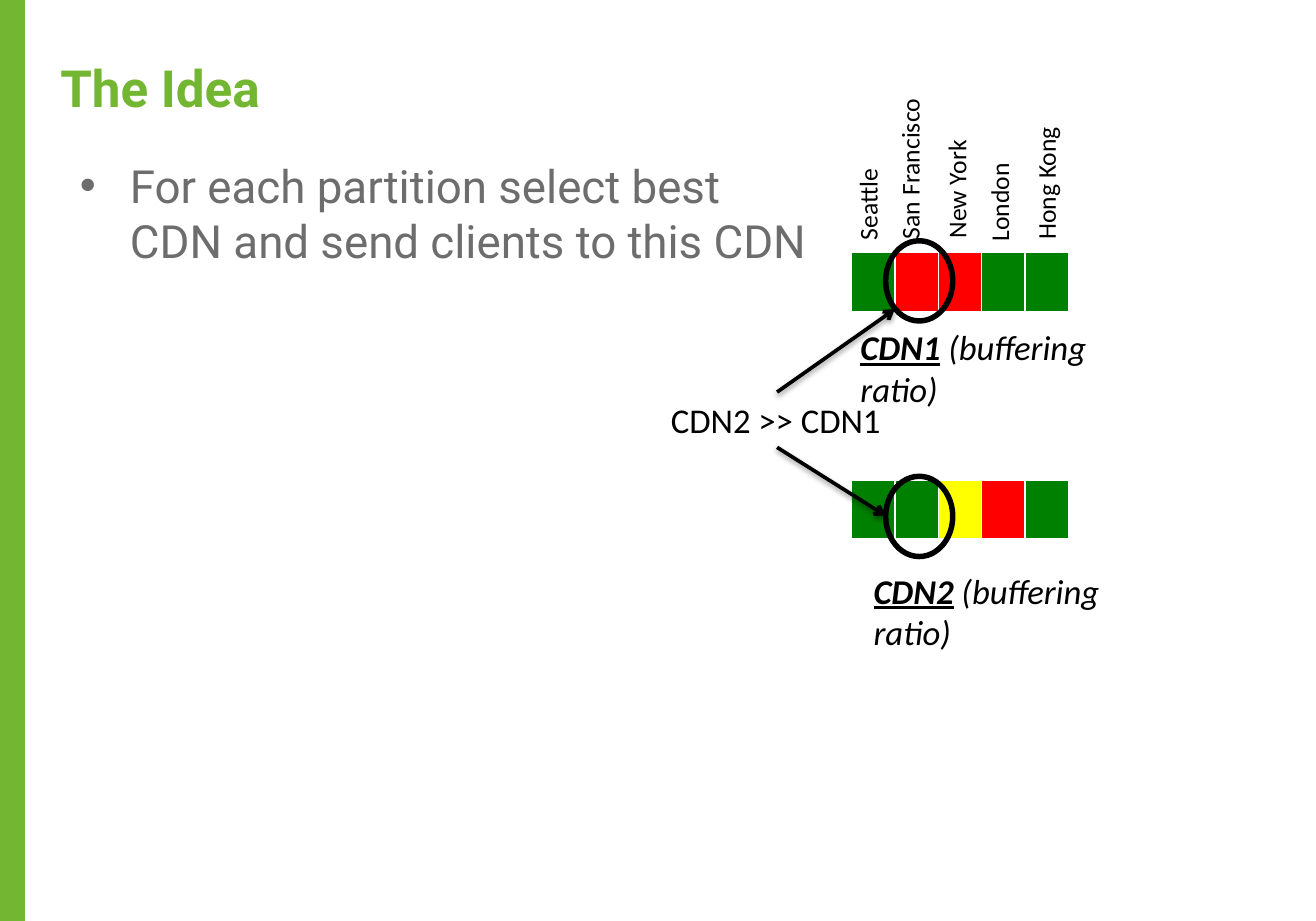
from dataclasses import dataclass

from lxml import etree
from pptx import Presentation
from pptx import util as u
from pptx.dml.color import RGBColor
from pptx.enum import shapes, text
from pptx.oxml import parse_xml
from pptx.oxml.ns import nsdecls, qn

EMU_PER_PX = 9144
BLACK = RGBColor(0x00, 0x00, 0x00)
WHITE = RGBColor(0xFF, 0xFF, 0xFF)
LIME = RGBColor(0x73, 0xB6, 0x32)
GREY = RGBColor(0x6D, 0x6D, 0x6D)
GREEN = RGBColor(0x00, 0x80, 0x00)
YELLOW = RGBColor(0xFF, 0xFF, 0x00)
RED = RGBColor(0xFF, 0x00, 0x00)
CELL_W, CELL_H = 33, 46


@dataclass(frozen=True)
class CdnRow:
    """A strip of city cells with its ring, caption and arrow end."""

    name: str
    top: int
    colours: tuple[RGBColor, ...]
    caption: tuple[int, int]
    ring_top: int
    arrow_side: int
    arrow_end: tuple[int, int]


@dataclass(frozen=True)
class City:
    """A column label read from bottom to top."""

    name: str
    left: int
    top: int
    width: int


ROWS = (
    CdnRow("CDN1", 192, (GREEN, RED, RED, GREEN, GREEN), (644, 243), 183, 0, (680, 235)),
    CdnRow("CDN2", 365, (GREEN, GREEN, YELLOW, RED, GREEN), (654, 428), 362, 2, (673, 392)),
)
CITIES = (
    City("Seattle", 619, 135, 81),
    City("San Francisco", 624, 107, 135),
    City("New York", 669, 116, 116),
    City("London", 719, 136, 81),
    City("Hong Kong", 731, 111, 128),
)


def px(n: int) -> u.Emu:
    """Turn px into EMU."""
    return u.Emu(n * EMU_PER_PX)


def add_run(p, content: str, *, size: int, font: str = "Calibri", colour: RGBColor = BLACK,
            bold: bool = False, italic: bool = False, underline: bool = False) -> None:
    """Append a formatted run to a paragraph."""
    r = p.add_run()
    r.text = content
    f = r.font
    f.size, f.name, f.color.rgb = u.Pt(size), font, colour
    f.bold, f.italic, f.underline = bold, italic, underline


def add_box(s, left: int, top: int, width: int, height: int, *, wrap: bool = True):
    """Add an empty text box."""
    sp = s.shapes.add_textbox(px(left), px(top), px(width), px(height))
    sp.text_frame.word_wrap = wrap
    return sp


def add_bullet(p, indent: int) -> None:
    """Give a paragraph a hanging bullet."""
    pPr = p._p.get_or_add_pPr()
    pPr.set("marL", str(px(indent)))
    pPr.set("indent", str(px(-indent)))
    etree.SubElement(pPr, qn("a:buFont")).set("typeface", "Arial")
    etree.SubElement(pPr, qn("a:buChar")).set("char", "•")


def add_strip(s, row: CdnRow) -> None:
    """Add the one-row table of coloured cells."""
    n = len(row.colours)
    table = s.shapes.add_table(1, n, px(647), px(row.top), px(CELL_W * n), px(CELL_H)).table
    table.first_row = table.horz_banding = False
    for i, colour in enumerate(row.colours):
        table.columns[i].width = px(CELL_W)
        cell = table.cell(0, i)
        cell.fill.solid()
        cell.fill.fore_color.rgb = colour
        tcPr = cell._tc.get_or_add_tcPr()
        for k, (side, pt) in enumerate((("L", 1), ("R", 1), ("T", 1), ("B", 3))):
            tcPr.insert(k, parse_xml(
                f'<a:ln{side} {nsdecls("a")} w="{u.Pt(pt)}"><a:solidFill>'
                f'<a:srgbClr val="{WHITE}"/></a:solidFill></a:ln{side}>'))


def add_ring(s, top: int) -> None:
    """Circle the San Francisco cell."""
    sp = s.shapes.add_shape(shapes.MSO_SHAPE.OVAL, px(673), px(top), px(51), px(61))
    sp.shadow.inherit = False
    sp.fill.background()
    sp.line.color.rgb, sp.line.width = BLACK, u.Pt(3)


def add_arrow(s, source, side: int, end: tuple[int, int]) -> None:
    """Draw a shadowed arrow from a side of the source box."""
    x, y = end
    line = s.shapes.add_connector(shapes.MSO_CONNECTOR.STRAIGHT, 0, 0, px(x), px(y))
    line.begin_connect(source, side)
    line.line.color.rgb, line.line.width = BLACK, u.Pt(2)
    etree.SubElement(line.line._get_or_add_ln(), qn("a:tailEnd")).set("type", "arrow")
    line._element.spPr.append(parse_xml(
        f'<a:effectLst {nsdecls("a")}><a:outerShdw blurRad="{u.Pt(3.1)}" dist="{u.Pt(1.6)}" '
        f'dir="5400000" rotWithShape="0"><a:srgbClr val="{BLACK}"><a:alpha val="38000"/>'
        '</a:srgbClr></a:outerShdw></a:effectLst>'))


def add_city(s, city: City) -> None:
    """Add a rotated city label."""
    sp = add_box(s, city.left, city.top, city.width, 34)
    sp.rotation = 270
    add_run(sp.text_frame.paragraphs[0], city.name, size=14)


def main() -> None:
    """Build the slide."""
    prs = Presentation()
    prs.slide_width, prs.slide_height = px(1000), px(700)
    s = prs.slides.add_slide(prs.slide_layouts[6])

    bar = s.shapes.add_shape(shapes.MSO_SHAPE.RECTANGLE, 0, 0, px(19), px(700))
    bar.shadow.inherit = False
    bar.fill.solid()
    bar.fill.fore_color.rgb = LIME
    bar.line.fill.background()

    title = add_box(s, 36, 35, 919, 63).text_frame
    title.vertical_anchor = text.MSO_ANCHOR.MIDDLE
    add_run(title.paragraphs[0], "The Idea", size=28, font="Roboto", colour=LIME, bold=True)

    p = add_box(s, 51, 115, 573, 130).text_frame.paragraphs[0]
    add_bullet(p, 38)
    add_run(p, "For each partition select best CDN and send clients to this CDN",
            size=25, font="Roboto", colour=GREY)

    verdict = add_box(s, 500, 298, 181, 42, wrap=False)
    add_run(verdict.text_frame.paragraphs[0], "CDN2 >> CDN1", size=19)

    for row in ROWS:
        add_strip(s, row)
        p = add_box(s, *row.caption, 253, 40).text_frame.paragraphs[0]
        add_run(p, row.name, size=19, bold=True, italic=True, underline=True)
        add_run(p, " (buffering ratio)", size=19, italic=True)
        add_ring(s, row.ring_top)
        add_arrow(s, verdict, row.arrow_side, row.arrow_end)
    for city in CITIES:
        add_city(s, city)

    prs.save("out.pptx")


if __name__ == "__main__":
    main()
